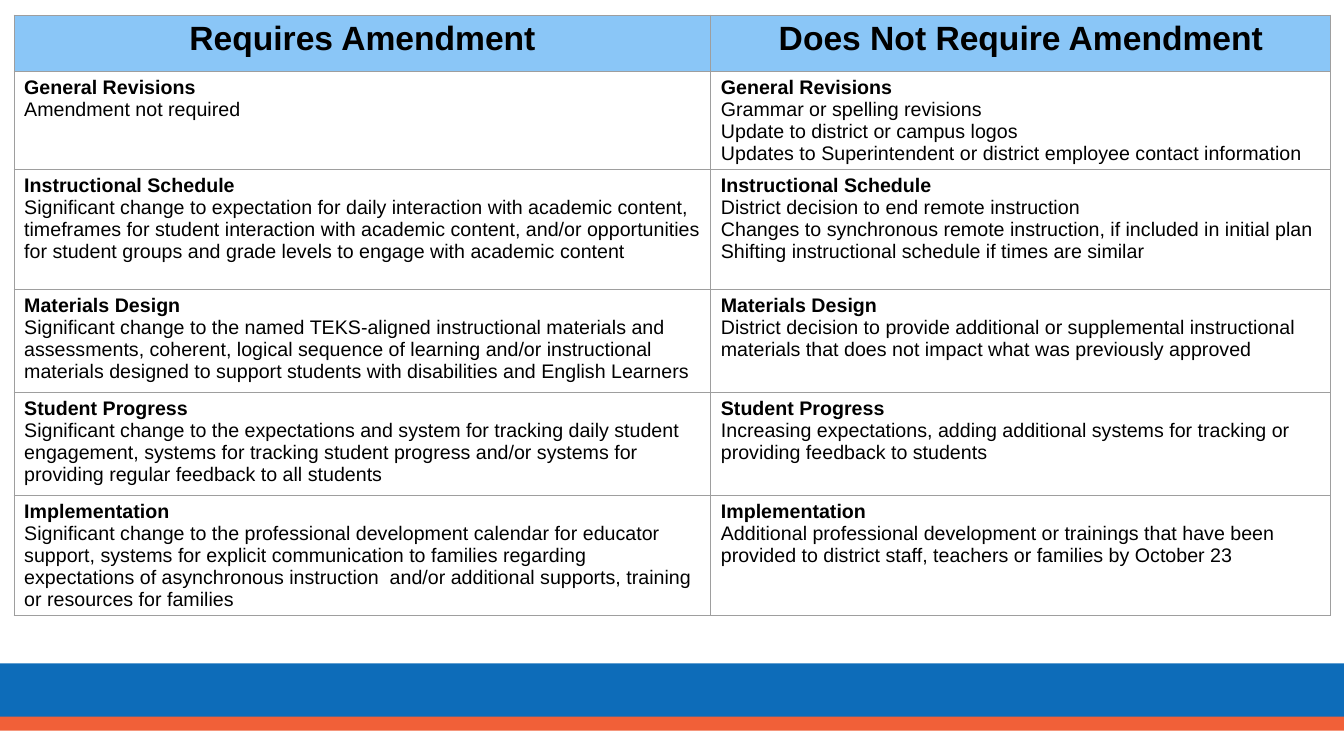
from pptx import Presentation
from pptx import util as u
from pptx.dml.color import RGBColor
from pptx.enum import shapes, text
from pptx.oxml.ns import qn
from lxml import etree


def rgb(value):
    return RGBColor.from_string(value)


class Deck:
    font = "Arial"
    ink = "000000"
    header_fill = "8AC6F7"
    border = "9E9E9E"

    def __init__(self, width, height):
        self.prs = Presentation()
        self.prs.slide_width = u.Inches(width)
        self.prs.slide_height = u.Inches(height)
        self.s = self.prs.slides.add_slide(self.prs.slide_layouts[6])

    def band(self, top, height, color):
        sp = self.s.shapes.add_shape(
            shapes.MSO_SHAPE.RECTANGLE, 0, u.Inches(top),
            self.prs.slide_width, u.Inches(height))
        sp.shadow.inherit = False
        sp.fill.solid()
        sp.fill.fore_color.rgb = rgb(color)
        sp.line.fill.background()

    def cell_borders(self, cell):
        tc_pr = cell._tc.get_or_add_tcPr()
        for side in ("a:lnL", "a:lnR", "a:lnT", "a:lnB"):
            ln = etree.SubElement(tc_pr, qn(side), w=str(u.Pt(0.75)))
            fill = etree.SubElement(ln, qn("a:solidFill"))
            etree.SubElement(fill, qn("a:srgbClr"), val=self.border)

    def cell(self, cell, lines, header):
        self.cell_borders(cell)
        if header:
            cell.fill.solid()
            cell.fill.fore_color.rgb = rgb(self.header_fill)
        else:
            cell.fill.background()
        tf = cell.text_frame
        tf.text = "\n".join(lines)
        for i, p in enumerate(tf.paragraphs):
            p.font.name = self.font
            p.font.size = u.Pt(24 if header else 14)
            p.font.bold = i == 0
            p.font.color.rgb = rgb(self.ink)
            if header:
                p.alignment = text.PP_ALIGN.CENTER

    def table(self, left, top, widths, heights, rows):
        frame = self.s.shapes.add_table(
            len(rows), len(widths), u.Inches(left), u.Inches(top),
            u.Inches(sum(widths)), u.Inches(sum(heights)))
        table = frame.table
        table.first_row = table.horz_banding = False
        for column, width in zip(table.columns, widths):
            column.width = u.Inches(width)
        for row, height in zip(table.rows, heights):
            row.height = u.Inches(height)
        for r, row in enumerate(rows):
            for c, lines in enumerate(row):
                self.cell(table.cell(r, c), lines, header=r == 0)


# Topic, changes that require amendment, changes that do not
TOPICS = [
    ("General Revisions",
     ["Amendment not required"],
     ["Grammar or spelling revisions",
      "Update to district or campus logos",
      "Updates to Superintendent or district employee contact information"]),
    ("Instructional Schedule",
     ["Significant change to expectation for daily interaction with academic "
      "content, timeframes for student interaction with academic content, "
      "and/or opportunities for student groups and grade levels to engage "
      "with academic content"],
     ["District decision to end remote instruction",
      "Changes to synchronous remote instruction, if included in initial plan",
      "Shifting instructional schedule if times are similar"]),
    ("Materials Design",
     ["Significant change to the named TEKS-aligned instructional materials "
      "and assessments, coherent, logical sequence of learning and/or "
      "instructional materials designed to support students with "
      "disabilities and English Learners"],
     ["District decision to provide additional or supplemental instructional "
      "materials that does not impact what was previously approved"]),
    ("Student Progress",
     ["Significant change to the expectations and system for tracking daily "
      "student engagement, systems for tracking student progress and/or "
      "systems for providing regular feedback to all students"],
     ["Increasing expectations, adding additional systems for tracking or "
      "providing feedback to students"]),
    ("Implementation",
     ["Significant change to the professional development calendar for "
      "educator support, systems for explicit communication to families "
      "regarding expectations of asynchronous instruction  and/or additional "
      "supports, training or resources for families"],
     ["Additional professional development or trainings that have been "
      "provided to district staff, teachers or families by October 23"]),
]


def main():
    deck = Deck(13.33, 7.5)

    # Footer bands
    deck.band(6.58, 0.58, "0D6CB9")
    deck.band(7.11, 0.14, "F16038")

    # Amendment table
    rows = [(["Requires Amendment"], ["Does Not Require Amendment"])]
    rows += [([topic] + needed, [topic] + exempt)
             for topic, needed, exempt in TOPICS]
    deck.table(0.14, 0.15, [6.91, 6.15],
               [0.56, 0.97, 1.19, 1.02, 1.02, 1.19], rows)

    deck.prs.save("out.pptx")


if __name__ == "__main__":
    main()
